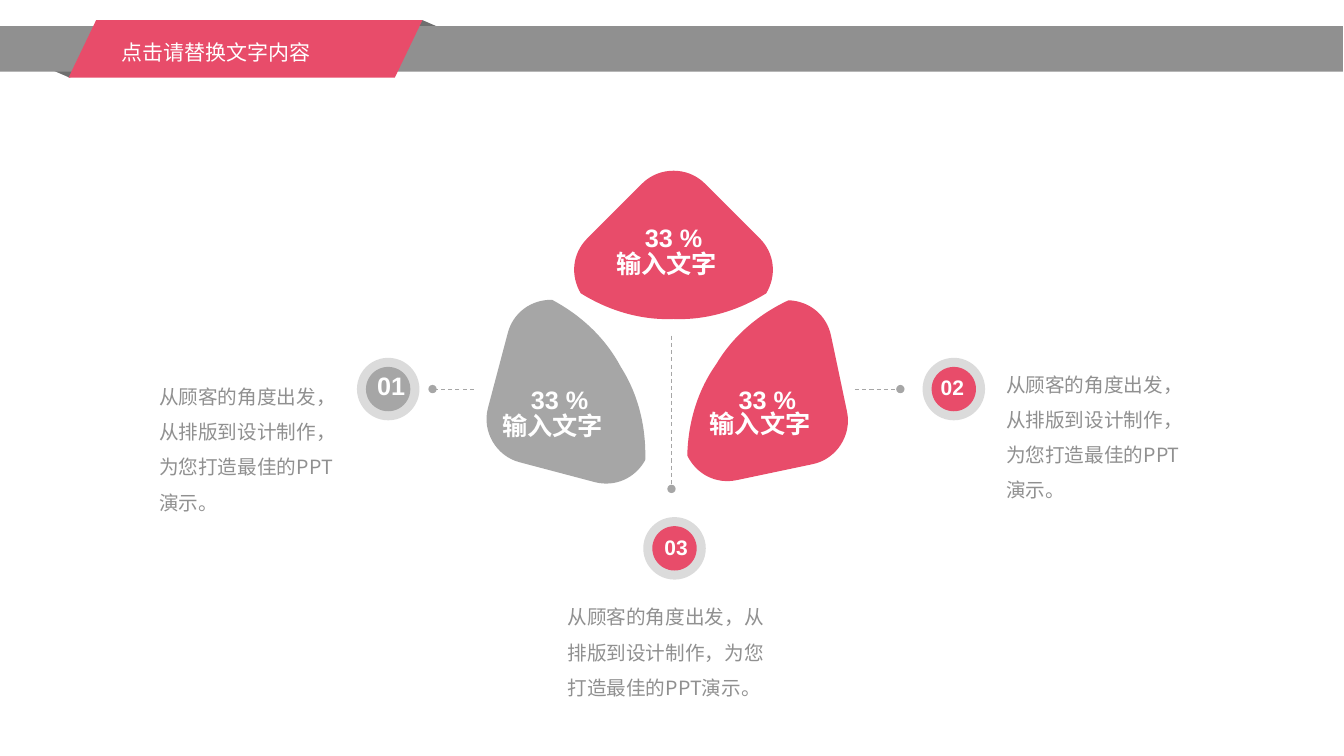
"""Build a three-petal infographic slide with numbered callouts."""
from dataclasses import dataclass

from lxml import etree
from pptx import Presentation
from pptx.dml.color import RGBColor
from pptx.enum.dml import MSO_LINE
from pptx.enum.shapes import MSO_CONNECTOR, MSO_SHAPE
from pptx.enum.text import MSO_ANCHOR, MSO_AUTO_SIZE, PP_ALIGN
from pptx.oxml.ns import qn
from pptx.shapes.autoshape import Shape
from pptx.slide import Slide
from pptx.util import Inches, Pt

TRIANGLE = MSO_SHAPE.ISOSCELES_TRIANGLE
RECTANGLE = MSO_SHAPE.RECTANGLE
PARALLELOGRAM = MSO_SHAPE.PARALLELOGRAM
OVAL = MSO_SHAPE.OVAL
STRAIGHT = MSO_CONNECTOR.STRAIGHT
DASH = MSO_LINE.DASH
TOP, MIDDLE, BOTTOM = MSO_ANCHOR.TOP, MSO_ANCHOR.MIDDLE, MSO_ANCHOR.BOTTOM
LEFT, CENTER = PP_ALIGN.LEFT, PP_ALIGN.CENTER
GROW = MSO_AUTO_SIZE.SHAPE_TO_FIT_TEXT

COLORS = {
    "pink": "E84C6A",
    "gray": "A6A6A6",
    "ring": "DBDBDB",
    "bar": "909090",
    "fold": "6F6F6F",
    "white": "FFFFFF",
}
LATIN_FONT = "Arial"
CHINESE_FONT = "Noto Sans CJK SC"
BODY_TEXT = "从顾客的角度出发，从排版到设计制作，为您打造最佳的PPT演示。"
RING_SIZE, DISC_SIZE = 0.62, 0.44

Point = tuple[float, float]
Box = tuple[float, float, float, float]

PETAL_START: Point = (-0.38, -0.82)
PETAL_SEGMENTS: list[list[Point]] = [
    [(-0.62, -0.82), (-0.82, -0.62), (-0.82, -0.38)],
    [(-0.82, 0.39)],
    [(-0.82, 0.6), (-0.68, 0.77), (-0.48, 0.82)],
    [(-0.18, 0.75), (0.12, 0.6), (0.35, 0.35)],
    [(0.6, 0.12), (0.75, -0.18), (0.82, -0.48)],
    [(0.77, -0.68), (0.6, -0.82), (0.39, -0.82)],
]


@dataclass(frozen=True)
class TextStyle:
    size: float
    color: str = "white"
    font: str = LATIN_FONT
    bold: bool = True
    spacing: float = 1.0
    align: PP_ALIGN = LEFT
    anchor: MSO_ANCHOR = TOP
    insets: Point = (0.1, 0.05)


@dataclass(frozen=True)
class Petal:
    center: Point
    rotation: float
    color: str
    percent_at: Point
    label_at: Point


@dataclass(frozen=True)
class Callout:
    number: str
    number_size: float
    number_box: Box
    center: Point
    color: str
    line_start: Point
    line_end: Point
    body_box: Box


TITLE_STYLE = TextStyle(15, bold=False, spacing=1.5)
BODY_STYLE = TextStyle(14, "bar", CHINESE_FONT, False, 1.5)
PERCENT_STYLE = TextStyle(18, spacing=1.6, align=CENTER, insets=(0, 0))
LABEL_STYLE = TextStyle(18, anchor=MIDDLE, insets=(0.02, 0.02))

PETALS = [
    Petal((5.73, 3.89), 284.8, "gray", (5.08, 3.63), (4.96, 4.05)),
    Petal((7.52, 3.88), 168.1, "pink", (7.14, 3.63), (7.02, 4.03)),
    Petal((6.68, 2.67), 45, "pink", (6.21, 2.03), (6.09, 2.44)),
]
CALLOUTS = [
    Callout("01", 18, (3.7, 3.63, 0.46, 0.38), (3.85, 3.86), "gray",
            (4.7, 3.86), (4.29, 3.86), (1.48, 3.65, 1.94, 1.51)),
    Callout("02", 15, (9.29, 3.68, 0.36, 0.33), (9.46, 3.86), "pink",
            (8.48, 3.86), (8.93, 3.86), (9.88, 3.53, 1.94, 1.51)),
    Callout("03", 15, (6.55, 5.13, 0.45, 0.46), (6.69, 5.44), "pink",
            (6.66, 3.33), (6.66, 4.85), (5.53, 5.84, 2.2, 1.16)),
]


def paint(shape: Shape, color: str) -> None:
    shape.shadow.inherit = False
    shape.fill.solid()
    shape.fill.fore_color.rgb = RGBColor.from_string(COLORS[color])
    shape.line.fill.background()


def add_preset(slide: Slide, kind: MSO_SHAPE, box: Box, color: str) -> Shape:
    shape = slide.shapes.add_shape(kind, *map(Inches, box))
    paint(shape, color)
    return shape


def add_outline(slide: Slide, points: list[Point]) -> Shape:
    corners = [(Inches(x), Inches(y)) for x, y in points]
    builder = slide.shapes.build_freeform(*corners[0], scale=1.0)
    builder.add_line_segments(corners[1:], close=True)
    return builder.convert_to_shape()


def write_text(shape: Shape, text: str, style: TextStyle) -> None:
    text_frame = shape.text_frame
    text_frame.word_wrap = True
    text_frame.auto_size = GROW
    text_frame.vertical_anchor = style.anchor
    text_frame.margin_left = text_frame.margin_right = Inches(style.insets[0])
    text_frame.margin_top = text_frame.margin_bottom = Inches(style.insets[1])
    text_frame.text = text
    paragraph = text_frame.paragraphs[0]
    paragraph.alignment = style.align
    paragraph.line_spacing = style.spacing
    run = paragraph.runs[0]
    run.font.size = Pt(style.size)
    run.font.bold = style.bold
    run.font.name = style.font
    run.font.color.rgb = RGBColor.from_string(COLORS[style.color])
    etree.SubElement(run.font._element, qn("a:ea")).set("typeface", CHINESE_FONT)


def add_label(slide: Slide, text: str, box: Box, style: TextStyle) -> None:
    left, top, width, height = box
    right, bottom = left + width, top + height
    shape = add_outline(slide, [(left, top), (right, top), (right, bottom), (left, bottom)])
    shape.shadow.inherit = False
    shape.fill.background()
    shape.line.fill.background()
    write_text(shape, text, style)


def bend_segments(shape: Shape) -> None:
    outline = shape._element.spPr.find(".//" + qn("a:path"))
    lines = iter(outline.findall(qn("a:lnTo")))
    for controls in PETAL_SEGMENTS:
        segment = [next(lines) for _ in controls]
        if len(segment) == 3:
            curve = etree.Element(qn("a:cubicBezTo"))
            segment[0].addprevious(curve)
            for line in segment:
                curve.append(line[0])
                outline.remove(line)


def add_petal(slide: Slide, petal: Petal) -> None:
    offsets = [PETAL_START] + [point for controls in PETAL_SEGMENTS for point in controls]
    center_x, center_y = petal.center
    shape = add_outline(slide, [(center_x + x, center_y + y) for x, y in offsets])
    bend_segments(shape)
    shape.rotation = petal.rotation
    paint(shape, petal.color)


def add_callout(slide: Slide, callout: Callout) -> None:
    for size, color in ((RING_SIZE, "ring"), (DISC_SIZE, callout.color)):
        x, y = (value - size / 2 for value in callout.center)
        add_preset(slide, OVAL, (x, y, size, size), color)
    number_style = TextStyle(callout.number_size, anchor=BOTTOM, insets=(0.04, 0.04))
    add_label(slide, callout.number, callout.number_box, number_style)
    ends = map(Inches, (*callout.line_start, *callout.line_end))
    connector = slide.shapes.add_connector(STRAIGHT, *ends)
    connector.line.color.rgb = RGBColor.from_string(COLORS["gray"])
    connector.line.width = Pt(0.75)
    connector.line.dash_style = DASH
    properties = connector._element.spPr
    etree.SubElement(properties.find(qn("a:ln")), qn("a:tailEnd")).set("type", "oval")
    etree.SubElement(properties, qn("a:effectLst"))
    add_label(slide, BODY_TEXT, callout.body_box, BODY_STYLE)


def add_header(slide: Slide) -> None:
    add_preset(slide, TRIANGLE, (3.59, 0.2, 1.2, 0.26), "fold")
    add_preset(slide, TRIANGLE, (0.09, 0.51, 1.2, 0.26), "fold").rotation = 180
    add_preset(slide, RECTANGLE, (-0.01, 0.26, 13.33, 0.45), "bar")
    ribbon = add_preset(slide, PARALLELOGRAM, (0.68, 0.2, 3.51, 0.57), "pink")
    ribbon.adjustments[0] = 0.48
    title = slide.shapes.add_textbox(*map(Inches, (1.11, 0.22, 2.63, 0.48)))
    write_text(title, "点击请替换文字内容", TITLE_STYLE)


def main() -> None:
    presentation = Presentation()
    presentation.slide_width, presentation.slide_height = Inches(13.33), Inches(7.5)
    slide = presentation.slides.add_slide(presentation.slide_layouts[6])
    for callout in CALLOUTS:
        add_callout(slide, callout)
    for petal in PETALS:
        add_petal(slide, petal)
    for petal in PETALS:
        add_label(slide, "输入文字", (*petal.label_at, 1.17, 0.34), LABEL_STYLE)
        add_label(slide, "33 %", (*petal.percent_at, 0.94, 0.42), PERCENT_STYLE)
    add_header(slide)
    presentation.save("out.pptx")


if __name__ == "__main__":
    main()
